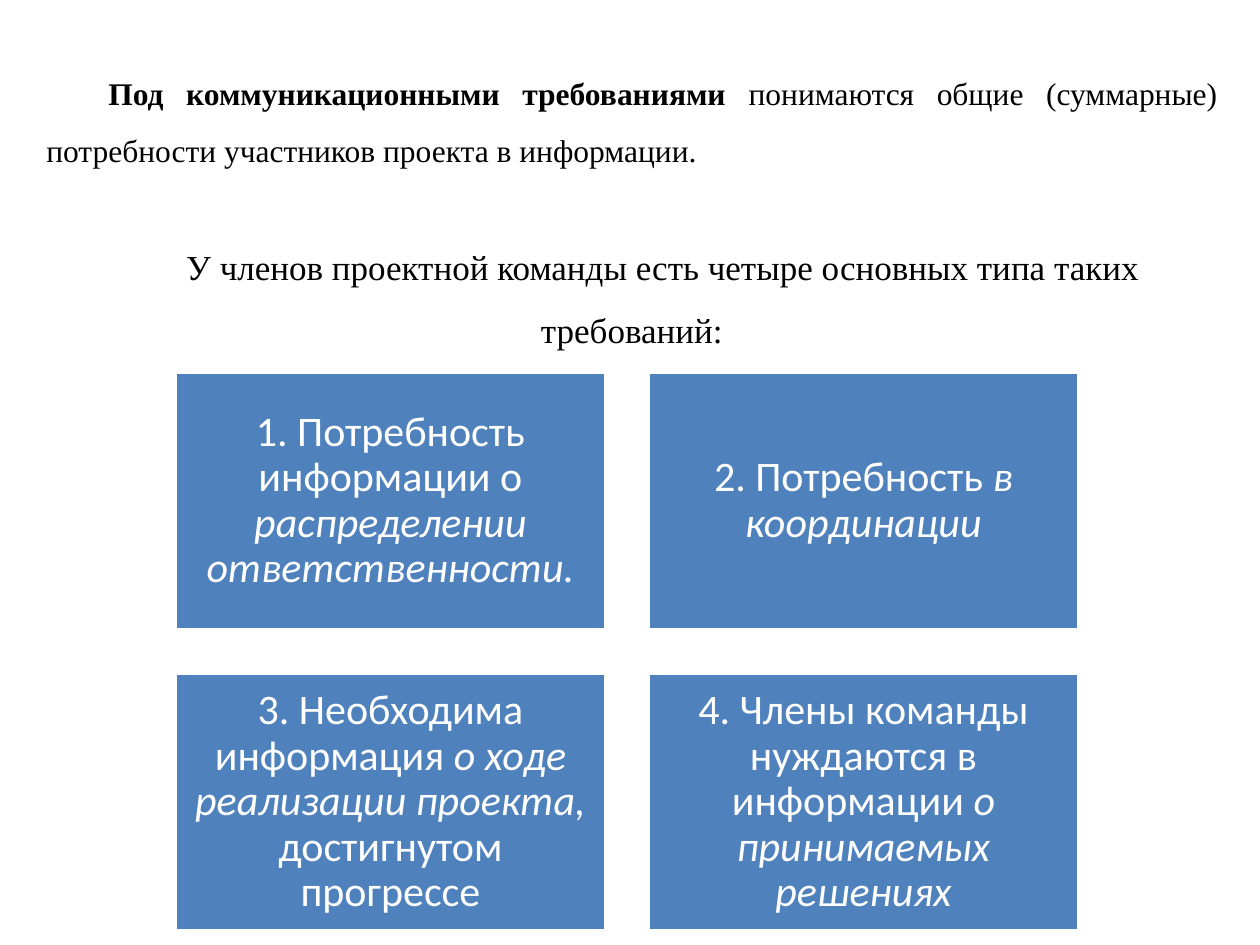
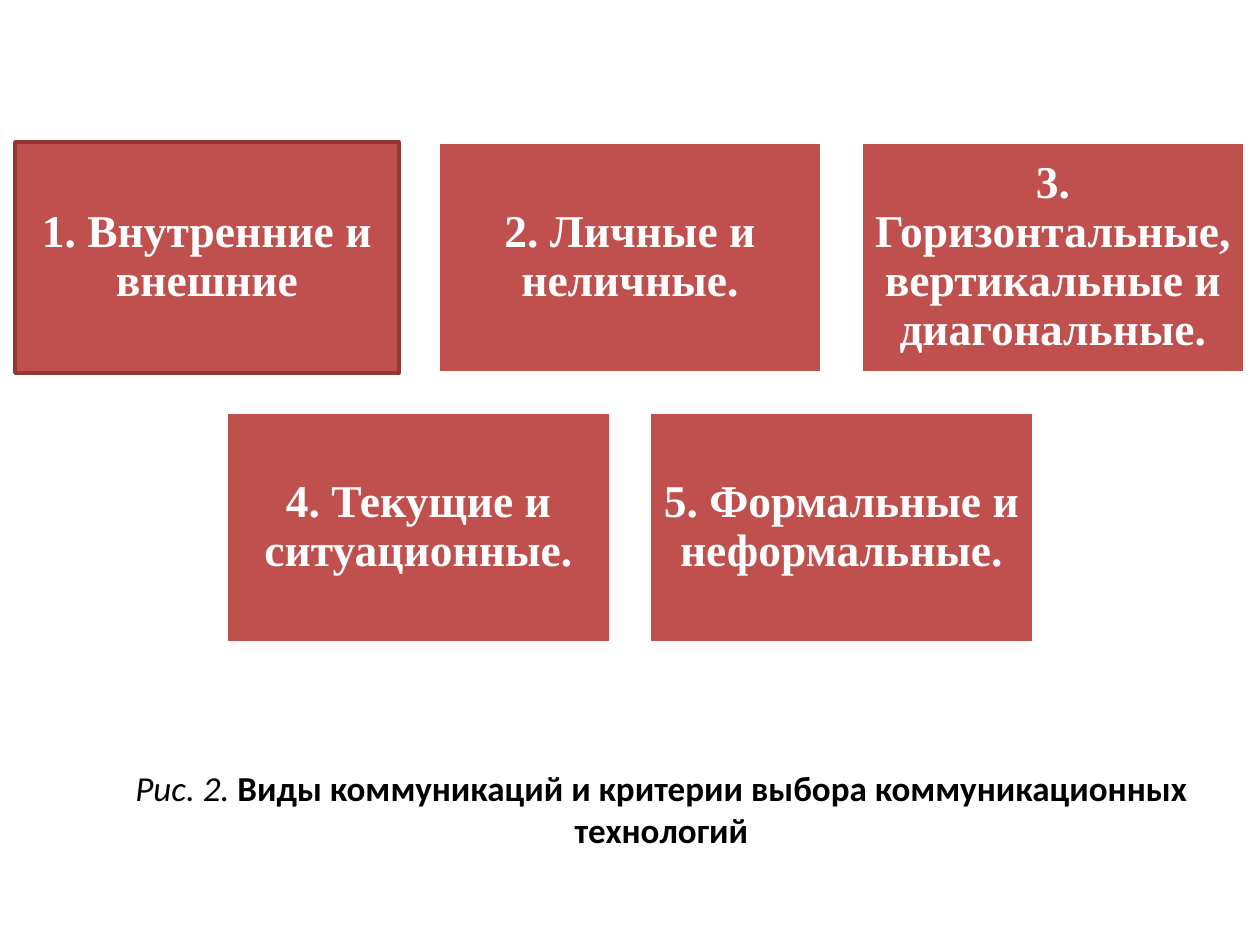
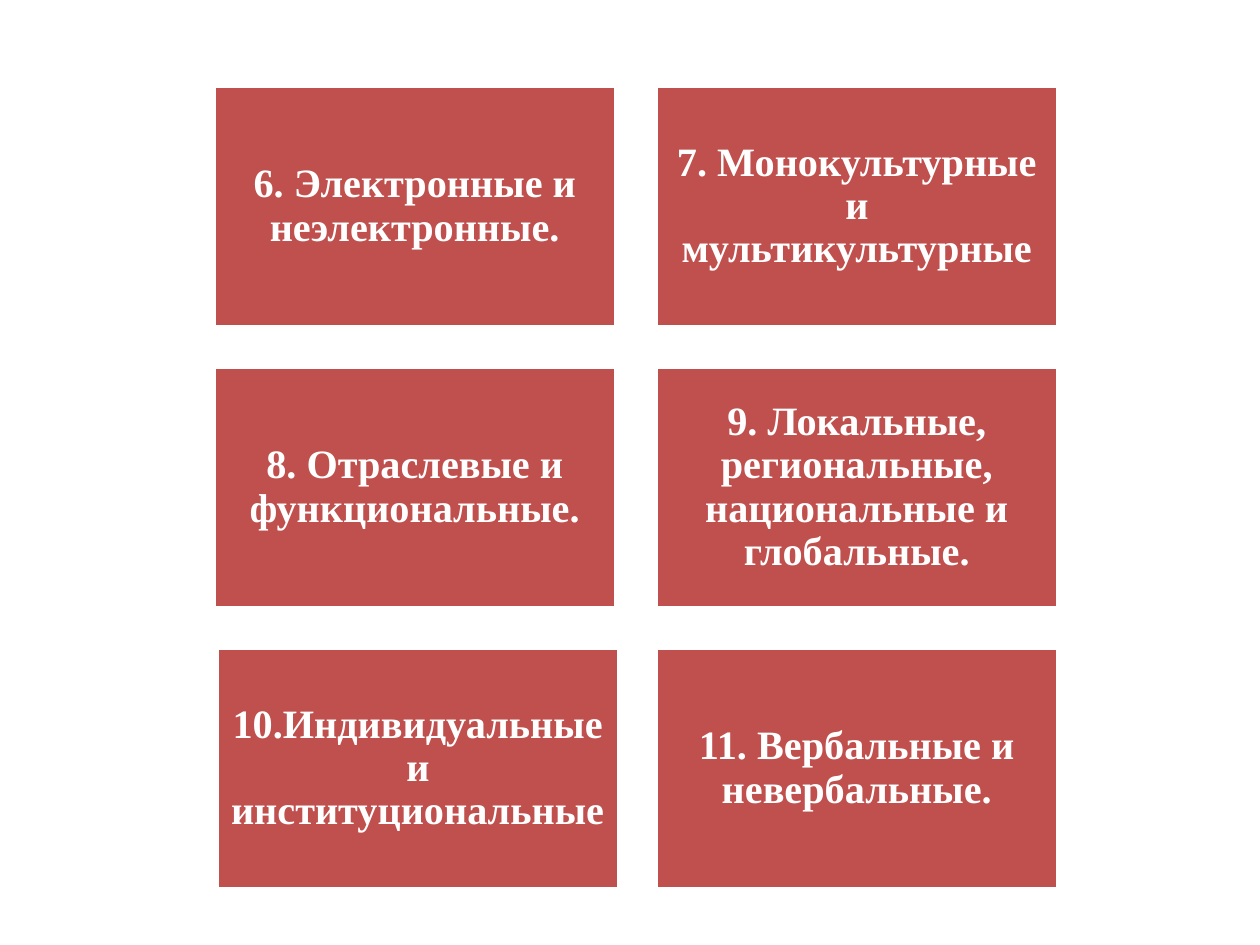
import pptx
import pptx.util
import pptx.dml.color
import pptx.enum.shapes
import pptx.enum.text

RGB = pptx.dml.color.RGBColor
ALIGN = pptx.enum.text.PP_ALIGN

# Shared style
BLACK = RGB(0x00, 0x00, 0x00)
WHITE = RGB(0xFF, 0xFF, 0xFF)
BLUE = RGB(0x4F, 0x81, 0xBD)
RED = RGB(0xC0, 0x50, 0x4D)
DARK = RGB(0x95, 0x37, 0x35)
SERIF = "Times New Roman"
SANS = "Calibri"
SCALE = 914400 / 126


def px(num):
    return pptx.util.Emu(round(num * SCALE))


class Deck:
    def __init__(self):
        self.prs = pptx.Presentation()
        self.prs.slide_width = px(1260)
        self.prs.slide_height = px(945)
        self.slide = None

    def page(self):
        self.slide = self.prs.slides.add_slide(self.prs.slide_layouts[6])

    def para(self, par, runs, font, size, color, align=ALIGN.CENTER):
        """Fill a paragraph from (text, marks) pairs; marks hold b and i."""
        par.alignment = align
        par.font.name = font
        par.font.size = pptx.util.Pt(size)
        par.font.color.rgb = color
        for text, marks in runs:
            run = par.add_run()
            run.text = text
            run.font.bold = "b" in marks
            run.font.italic = "i" in marks
        return par

    def box(self, left, top, width, height):
        frame = self.slide.shapes.add_textbox(
            px(left), px(top), px(width), px(height)).text_frame
        frame.word_wrap = True
        frame.auto_size = pptx.enum.text.MSO_AUTO_SIZE.SHAPE_TO_FIT_TEXT
        return frame

    def card(self, left, top, width, height, runs, fill, font, size, inset):
        card = self.slide.shapes.add_shape(
            pptx.enum.shapes.MSO_SHAPE.RECTANGLE,
            px(left), px(top), px(width), px(height))
        card.shadow.inherit = False
        card.fill.solid()
        card.fill.fore_color.rgb = fill
        card.line.color.rgb = WHITE
        card.line.width = pptx.util.Pt(2)
        frame = card.text_frame
        frame.word_wrap = True
        frame.vertical_anchor = pptx.enum.text.MSO_ANCHOR.MIDDLE
        frame.margin_left = frame.margin_right = px(inset)
        frame.margin_top = frame.margin_bottom = px(inset)
        par = self.para(frame.paragraphs[0], runs, font, size, WHITE)
        par.line_spacing = 0.9
        return card

    def grid(self, rows, mid, top, width, height, gap, **style):
        """Lay out rows of cards, each row centred on mid."""
        cards = []
        for row, items in enumerate(rows):
            span = len(items) * (width + gap) - gap
            for col, runs in enumerate(items):
                left = mid - span / 2 + col * (width + gap)
                cards.append(self.card(left, top + row * (height + gap),
                                       width, height, runs, **style))
        return cards


def bold(*texts):
    return [[(text, "b")] for text in texts]


def main():
    deck = Deck()

    # Slide 1: communication requirements
    deck.page()
    frame = deck.box(34, 49, 1196, 363)
    lead = deck.para(frame.paragraphs[0], [
        ("Под коммуникационными требованиями ", "b"),
        ("понимаются общие (суммарные) потребности участников проекта "
         "в информации.", ""),
    ], SERIF, 18, BLACK, ALIGN.JUSTIFY)
    intro = deck.para(frame.add_paragraph(), [
        ("У членов проектной команды есть четыре основных типа таких "
         "требований:", ""),
    ], SERIF, 20, BLACK)
    intro.space_before = pptx.util.Pt(32)
    for par in (lead, intro):
        par.line_spacing = 1.5
        par._p.get_or_add_pPr().set("indent", str(px(62)))
    needs = [
        [[("1. Потребность информации о", ""),
          (" распределении ответственности.", "i")],
         [("2. Потребность", ""), (" в координации", "i")]],
        [[("3. Необходима информация", ""),
          (" о ходе реализации проекта,", "i"),
          (" достигнутом прогрессе", "")],
         [("4. Члены команды нуждаются в информации ", ""),
          ("о принимаемых решениях", "i")]],
    ]
    deck.grid(needs, 627, 372, 430, 258, 43,
              fill=BLUE, font=SANS, size=24, inset=13)

    # Slide 2: kinds of communication, 1 to 5
    deck.page()
    kinds = [
        bold("1. Внутренние и внешние", "2. Личные и неличные.",
             "3. Горизонтальные, вертикальные и диагональные."),
        bold("4. Текущие и ситуационные.", "5. Формальные и неформальные."),
    ]
    cards = deck.grid(kinds, 630, 142, 384, 231, 39,
                      fill=RED, font=SERIF, size=26, inset=14)
    cards[0].line.color.rgb = DARK
    frame = deck.box(118, 760, 1087, 97)
    deck.para(frame.paragraphs[0], [
        ("Рис. 2.", "i"),
        (" Виды коммуникаций и критерии выбора коммуникационных "
         "технологий", "b"),
    ], SANS, 20, BLACK)

    # Slide 3: kinds of communication, 6 to 11
    deck.page()
    kinds = [
        bold("6. Электронные и неэлектронные.",
             "7. Монокультурные и мультикультурные"),
        bold("8. Отраслевые и функциональные.",
             "9. Локальные, региональные, национальные и глобальные."),
        bold("10.Индивидуальные и институциональные",
             "11. Вербальные и невербальные."),
    ]
    cards = deck.grid(kinds, 636, 86, 402, 241, 40,
                      fill=RED, font=SERIF, size=23, inset=13)
    cards[4].left += px(3)

    deck.prs.save("out.pptx")


if __name__ == "__main__":
    main()
